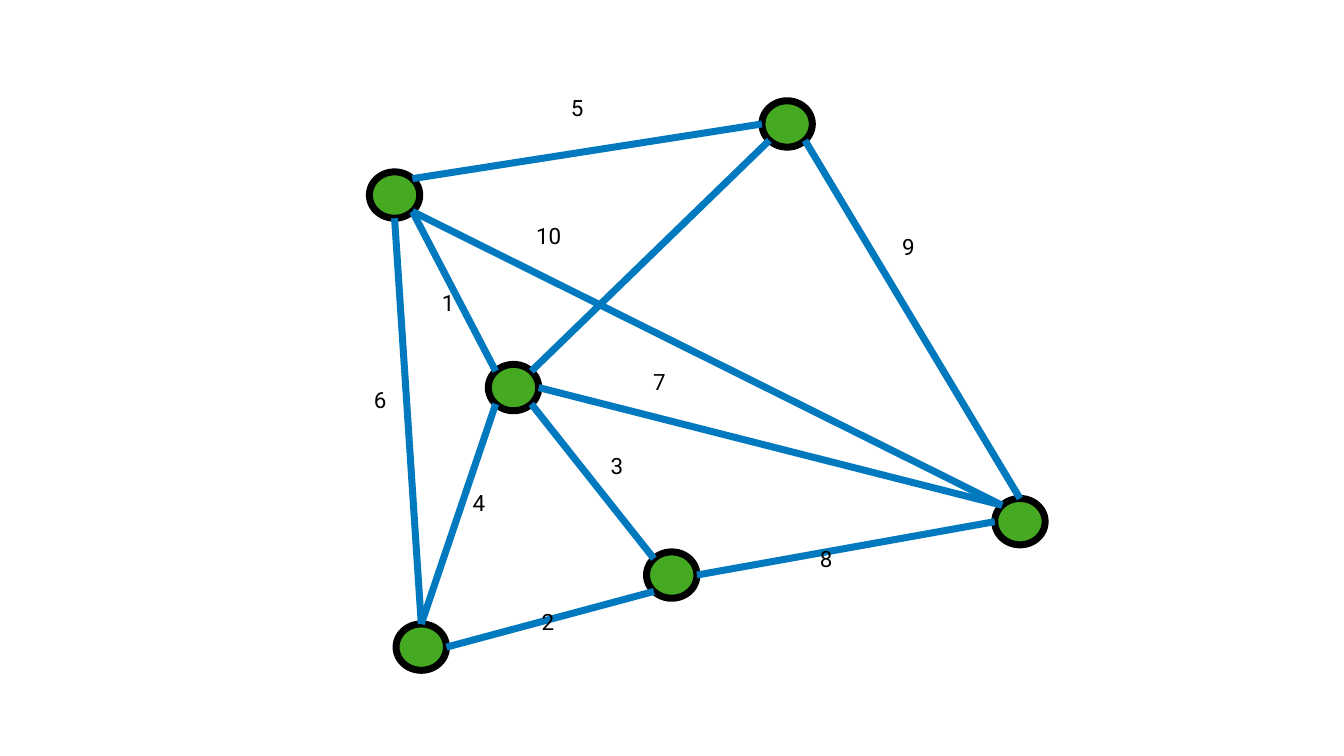
"""Build a slide showing a weighted graph of six nodes."""
from dataclasses import dataclass
from enum import Enum
from math import cos, radians, sin

from lxml.etree import SubElement
from pptx import Presentation
from pptx.dml.color import RGBColor
from pptx.enum.shapes import MSO_CONNECTOR, MSO_SHAPE
from pptx.enum.text import MSO_ANCHOR
from pptx.oxml.ns import qn
from pptx.slide import Slide
from pptx.util import Inches, Pt


@dataclass(frozen=True)
class Theme:
    node_fill: RGBColor = RGBColor(0x45, 0xAA, 0x21)
    outline: RGBColor = RGBColor(0, 0, 0)
    edge: RGBColor = RGBColor(0x00, 0x79, 0xBF)
    text: RGBColor = RGBColor(0, 0, 0)
    font: str = "Roboto"
    weight_size: int = 32
    stroke: int = 10


class Site(Enum):
    RIGHT = 0
    BOTTOM_RIGHT = 45
    BOTTOM = 90
    BOTTOM_LEFT = 135
    LEFT = 180
    TOP_LEFT = 225
    TOP = 270
    TOP_RIGHT = 315


@dataclass(frozen=True)
class Node:
    x: float
    y: float

    def at(self, site: Site) -> tuple[float, float]:
        angle = radians(site.value)
        return (self.x + NODE_WIDTH / 2 * cos(angle),
                self.y + NODE_HEIGHT / 2 * sin(angle))


@dataclass(frozen=True)
class Edge:
    start: Node
    start_site: Site
    end: Node
    end_site: Site


@dataclass(frozen=True)
class Weight:
    value: str
    left: float
    top: float
    width: float = 0.54


THEME = Theme()
NODE_WIDTH, NODE_HEIGHT = 1.0, 0.92
WEIGHT_HEIGHT, WEIGHT_INSET = 1.23, 0.06

UPPER_LEFT = Node(7.83, 3.87)
UPPER_RIGHT = Node(15.62, 2.46)
CENTRE = Node(10.19, 7.69)
LOWER_LEFT = Node(8.36, 12.84)
LOWER_MIDDLE = Node(13.33, 11.41)
LOWER_RIGHT = Node(20.24, 10.35)
NODES = (UPPER_LEFT, UPPER_RIGHT, CENTRE, LOWER_LEFT, LOWER_MIDDLE, LOWER_RIGHT)

EDGES = (
    Edge(UPPER_RIGHT, Site.BOTTOM_RIGHT, LOWER_RIGHT, Site.TOP),
    Edge(LOWER_RIGHT, Site.TOP_LEFT, UPPER_LEFT, Site.BOTTOM_RIGHT),
    Edge(UPPER_RIGHT, Site.BOTTOM_LEFT, CENTRE, Site.TOP_RIGHT),
    Edge(LOWER_LEFT, Site.TOP, CENTRE, Site.BOTTOM_LEFT),
    Edge(LOWER_MIDDLE, Site.TOP_LEFT, CENTRE, Site.BOTTOM_RIGHT),
    Edge(LOWER_RIGHT, Site.LEFT, LOWER_MIDDLE, Site.RIGHT),
    Edge(CENTRE, Site.TOP_LEFT, UPPER_LEFT, Site.BOTTOM_RIGHT),
    Edge(UPPER_RIGHT, Site.LEFT, UPPER_LEFT, Site.TOP_RIGHT),
    Edge(LOWER_LEFT, Site.TOP, UPPER_LEFT, Site.BOTTOM),
    Edge(LOWER_LEFT, Site.RIGHT, LOWER_MIDDLE, Site.BOTTOM_LEFT),
    Edge(LOWER_RIGHT, Site.TOP_LEFT, CENTRE, Site.RIGHT),
)

WEIGHTS = (
    Weight("5", 11.27, 1.56),
    Weight("6", 7.36, 7.35),
    Weight("10", 10.58, 4.1, width=0.7),
    Weight("9", 17.84, 4.32),
    Weight("1", 8.71, 5.42),
    Weight("4", 9.32, 9.39),
    Weight("3", 12.06, 8.66),
    Weight("2", 10.69, 11.76),
    Weight("7", 12.9, 6.99),
    Weight("8", 16.21, 10.51),
)


def draw_node(slide: Slide, node: Node) -> None:
    circle = slide.shapes.add_shape(
        MSO_SHAPE.OVAL,
        Inches(node.x - NODE_WIDTH / 2), Inches(node.y - NODE_HEIGHT / 2),
        Inches(NODE_WIDTH), Inches(NODE_HEIGHT))
    circle.shadow.inherit = False
    circle.fill.solid()
    circle.fill.fore_color.rgb = THEME.node_fill
    circle.line.color.rgb = THEME.outline
    circle.line.width = Pt(THEME.stroke)


def draw_edge(slide: Slide, edge: Edge) -> None:
    ends = (*edge.start.at(edge.start_site), *edge.end.at(edge.end_site))
    link = slide.shapes.add_connector(
        MSO_CONNECTOR.STRAIGHT, *(Inches(length) for length in ends))
    link.line.color.rgb = THEME.edge
    link.line.width = Pt(THEME.stroke)
    SubElement(link._element.spPr, qn("a:effectLst"))


def draw_weight(slide: Slide, weight: Weight) -> None:
    label = slide.shapes.add_textbox(
        Inches(weight.left), Inches(weight.top),
        Inches(weight.width), Inches(WEIGHT_HEIGHT))
    frame = label.text_frame
    frame.word_wrap = True
    frame.vertical_anchor = MSO_ANCHOR.MIDDLE
    frame.margin_left = frame.margin_right = Inches(WEIGHT_INSET)
    frame.margin_top = frame.margin_bottom = Inches(WEIGHT_INSET)
    paragraph = frame.paragraphs[0]
    paragraph.line_spacing = 0.9
    run = paragraph.add_run()
    run.text = weight.value
    run.font.name = THEME.font
    run.font.size = Pt(THEME.weight_size)
    run.font.color.rgb = THEME.text


def main() -> None:
    presentation = Presentation()
    presentation.slide_width = Inches(26.67)
    presentation.slide_height = Inches(15)
    slide = presentation.slides.add_slide(presentation.slide_layouts[6])
    for node in NODES:
        draw_node(slide, node)
    for edge in EDGES:
        draw_edge(slide, edge)
    for weight in WEIGHTS:
        draw_weight(slide, weight)
    presentation.save("out.pptx")


if __name__ == "__main__":
    main()
